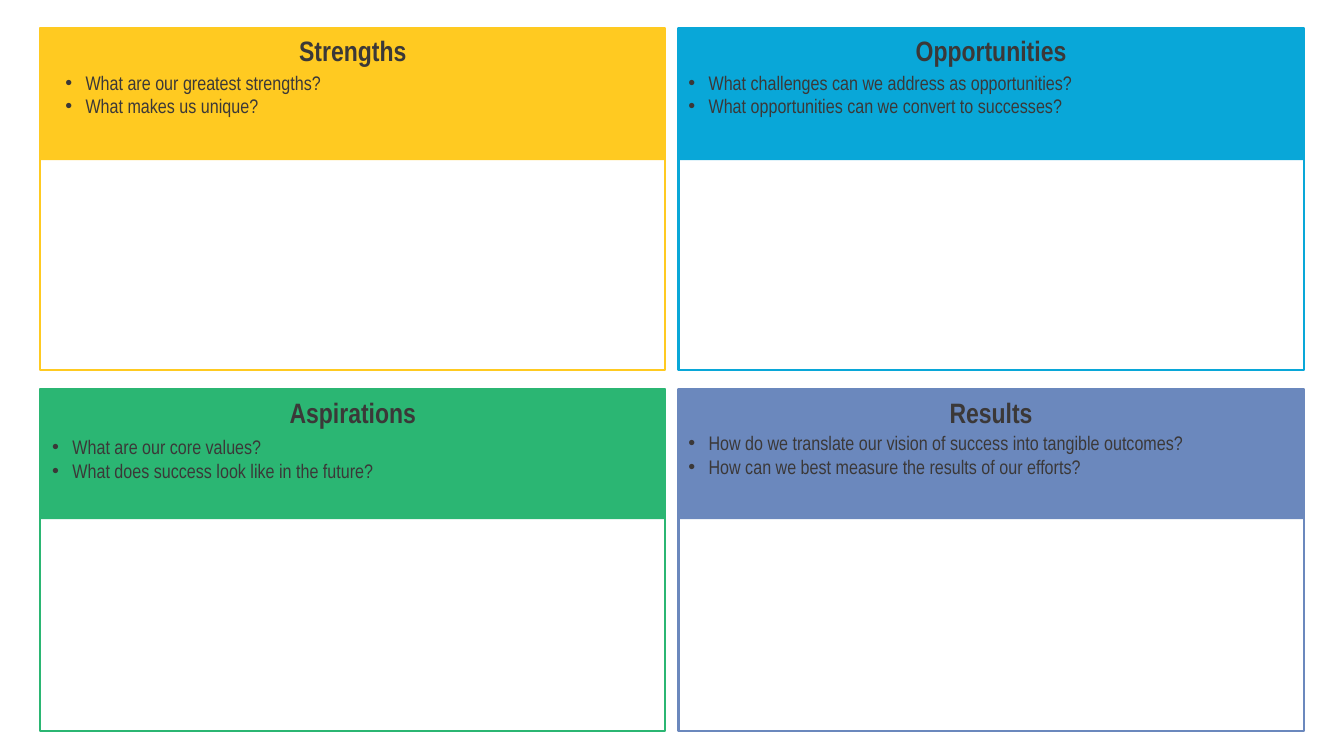
"""Build a SOAR analysis slide with four question panels."""
from lxml.etree import SubElement
from pptx import Presentation
from pptx.dml.color import RGBColor
from pptx.enum.shapes import MSO_SHAPE
from pptx.enum.text import MSO_AUTO_SIZE, PP_ALIGN
from pptx.oxml.ns import qn
from pptx.util import Pt

EMU_PER_PX = 9144
FONT = "Arial Narrow"
INK = "3B3838"
LEFT, RIGHT = 40, 673
PANEL_WIDTH, FRAME_HEIGHT, BANNER_HEIGHT = 620, 339, 130
HEADING_HEIGHT, QUESTIONS_HEIGHT = 44, 57
BULLET_INDENT = 20

# Each panel: left, frame top, banner top, heading top, questions left and top
PANELS = [
    ("Strengths", "FFCA21", (LEFT, 28, 29, 28), (55, 65),
     ["What are our greatest strengths?", "What makes us unique?"]),
    ("Opportunities", "09A7D8", (RIGHT, 28, 29, 28), (RIGHT, 65),
     ["What challenges can we address as opportunities?",
      "What opportunities can we convert to successes?"]),
    ("Aspirations", "2BB673", (LEFT, 386, 385, 387), (42, 427),
     ["What are our core values?", "What does success look like in the future?"]),
    ("Results", "6B88BD", (RIGHT, 386, 385, 387), (RIGHT, 423),
     ["How do we translate our vision of success into tangible outcomes?",
      "How can we best measure the results of our efforts?"]),
]


def px(length):
    """Turn px into EMU."""
    return length * EMU_PER_PX


def color(hex_string):
    """Turn a hex string into a colour."""
    return RGBColor.from_string(hex_string)


def add_rectangle(slide, left, top, height, fill, line=None):
    """Add a panel-wide rectangle, outlined when a line colour is given."""
    shape = slide.shapes.add_shape(
        MSO_SHAPE.RECTANGLE, px(left), px(top), px(PANEL_WIDTH), px(height))
    shape.shadow.inherit = False
    shape.fill.solid()
    shape.fill.fore_color.rgb = color(fill)
    if line:
        shape.line.color.rgb = color(line)
        shape.line.width = Pt(1.5)
    else:
        shape.line.fill.background()


def add_text(slide, left, top, height, lines, size, bold=False):
    """Add a panel-wide text box and return its paragraphs."""
    box = slide.shapes.add_textbox(px(left), px(top), px(PANEL_WIDTH), px(height))
    frame = box.text_frame
    frame.word_wrap = True
    frame.auto_size = MSO_AUTO_SIZE.SHAPE_TO_FIT_TEXT
    frame.text = "\n".join(lines)
    for paragraph in frame.paragraphs:
        paragraph.font.name = FONT
        paragraph.font.size = Pt(size)
        paragraph.font.bold = bold
        paragraph.font.color.rgb = color(INK)
    return frame.paragraphs


def add_heading(slide, left, top, text):
    """Add a centred bold panel heading."""
    for paragraph in add_text(slide, left, top, HEADING_HEIGHT, [text], 20, True):
        paragraph.alignment = PP_ALIGN.CENTER


def add_questions(slide, left, top, questions):
    """Add the bulleted questions of a panel."""
    for paragraph in add_text(slide, left, top, QUESTIONS_HEIGHT, questions, 14):
        properties = paragraph.font._element.getparent()
        properties.set("marL", str(px(BULLET_INDENT)))
        properties.set("indent", str(-px(BULLET_INDENT)))
        default_run = properties.find(qn("a:defRPr"))
        for tag, name, value in (("a:buFont", "typeface", "Arial"),
                                 ("a:buChar", "char", "•")):
            bullet = SubElement(properties, qn(tag))
            bullet.set(name, value)
            default_run.addprevious(bullet)


def add_panel(slide, heading, accent, panel_place, questions_place, questions):
    """Add one framed panel with its banner, heading and questions."""
    left, frame_top, banner_top, heading_top = panel_place
    add_rectangle(slide, left, frame_top, FRAME_HEIGHT, "FFFFFF", accent)
    add_rectangle(slide, left, banner_top, BANNER_HEIGHT, accent)
    add_heading(slide, left, heading_top, heading)
    add_questions(slide, *questions_place, questions)


def main():
    """Build and save the slide."""
    presentation = Presentation()
    presentation.slide_width = px(1333)
    presentation.slide_height = px(750)
    slide = presentation.slides.add_slide(presentation.slide_layouts[6])
    for panel in PANELS:
        add_panel(slide, *panel)
    presentation.save("out.pptx")


if __name__ == "__main__":
    main()
